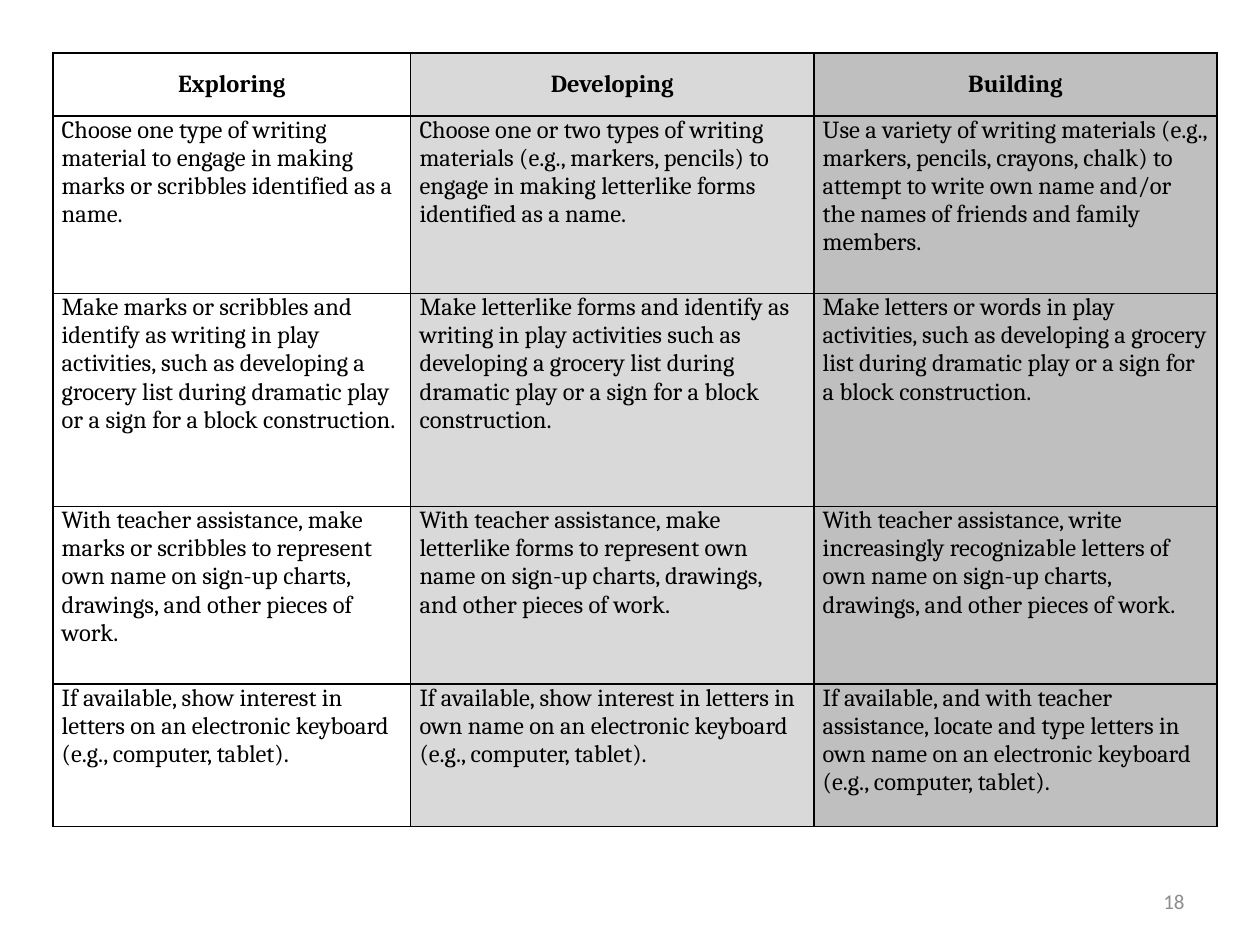
"""Build a slide with a table of three stages of early writing."""
from dataclasses import dataclass

from lxml import etree
from pptx import Presentation
from pptx import util as u
from pptx.dml.color import RGBColor
from pptx.enum import text
from pptx.oxml import ns


@dataclass(frozen=True)
class Theme:
    ink: str = "000000"
    mute: str = "8C8C8C"
    fills: tuple = (None, "D9D9D9", "BFBFBF")
    serif: str = "Cambria"
    sans: str = "Calibri"
    body: int = 14
    small: int = 12
    rule: int = 1


LOOK = Theme()
COLS = (2.84, 3.2, 3.2)
ROWS = (0.5, 1.41, 1.69, 1.41, 1.13)
CELLS = (
    ("Exploring", "Developing", "Building"),
    (
        "Choose one type of writing material to engage in making marks or scribbles identified as a name.",
        "Choose one or two types of writing materials (e.g., markers, pencils) to engage in making letterlike forms identified as a name.",
        "Use a variety of writing materials (e.g., markers, pencils, crayons, chalk) to attempt to write own name and/or the names of friends and family members.",
    ),
    (
        "Make marks or scribbles and identify as writing in play activities, such as developing a grocery list during dramatic play or a sign for a block construction.",
        "Make letterlike forms and identify as writing in play activities such as developing a grocery list during dramatic play or a sign for a block construction.",
        "Make letters or words in play activities, such as developing a grocery list during dramatic play or a sign for a block construction.",
    ),
    (
        "With teacher assistance, make marks or scribbles to represent own name on sign-up charts, drawings, and other pieces of work.",
        "With teacher assistance, make letterlike forms to represent own name on sign-up charts, drawings, and other pieces of work.",
        "With teacher assistance, write increasingly recognizable letters of own name on sign-up charts, drawings, and other pieces of work.",
    ),
    (
        "If available, show interest in letters on an electronic keyboard (e.g., computer, tablet).",
        "If available, show interest in letters in own name on an electronic keyboard (e.g., computer, tablet).",
        "If available, and with teacher assistance, locate and type letters in own name on an electronic keyboard (e.g., computer, tablet).",
    ),
)


def apply(item, values):
    for name, value in values.items():
        setattr(item, name, value)


def write(frame, words, align, color, **font):
    para = frame.paragraphs[0]
    para.alignment = align
    run = para.add_run()
    run.text = words
    apply(run.font, font)
    run.font.color.rgb = RGBColor.from_string(color)


def border(cell):
    props = cell._tc.get_or_add_tcPr()
    for i, side in enumerate(("lnL", "lnR", "lnT", "lnB")):
        line = etree.Element(ns.qn(f"a:{side}"), w=str(u.Pt(LOOK.rule)))
        fill = etree.SubElement(line, ns.qn("a:solidFill"))
        etree.SubElement(fill, ns.qn("a:srgbClr"), val=LOOK.ink)
        props.insert(i, line)


def fill_cell(cell, words, shade, head):
    pad = u.Inches(0.07)
    apply(cell, dict(
        margin_left=pad, margin_right=pad, margin_top=0, margin_bottom=0,
        vertical_anchor=text.MSO_ANCHOR.MIDDLE if head else text.MSO_ANCHOR.TOP,
    ))
    if shade:
        cell.fill.solid()
        cell.fill.fore_color.rgb = RGBColor.from_string(shade)
    else:
        cell.fill.background()
    border(cell)
    align = text.PP_ALIGN.CENTER if head else text.PP_ALIGN.LEFT
    write(cell.text_frame, words, align, LOOK.ink,
          name=LOOK.serif, size=u.Pt(LOOK.body), bold=head)


def add_grid(slide, left, top):
    size = [u.Inches(sum(spans)) for spans in (COLS, ROWS)]
    grid = slide.shapes.add_table(
        len(ROWS), len(COLS), u.Inches(left), u.Inches(top), *size).table
    apply(grid, dict(first_row=False, horz_banding=False))
    for col, wide in zip(grid.columns, COLS):
        col.width = u.Inches(wide)
    for i, (row, high) in enumerate(zip(grid.rows, ROWS)):
        row.height = u.Inches(high)
        for cell, words, shade in zip(row.cells, CELLS[i], LOOK.fills):
            fill_cell(cell, words, shade, i == 0)


def add_number(slide, words, *place):
    frame = slide.shapes.add_textbox(*map(u.Inches, place)).text_frame
    apply(frame, dict(word_wrap=True, vertical_anchor=text.MSO_ANCHOR.MIDDLE))
    write(frame, words, text.PP_ALIGN.RIGHT, LOOK.mute,
          name=LOOK.sans, size=u.Pt(LOOK.small))


def main():
    deck = Presentation()
    apply(deck, dict(slide_width=u.Inches(10), slide_height=u.Inches(7.5)))
    slide = deck.slides.add_slide(deck.slide_layouts[6])
    add_grid(slide, 0.42, 0.42)
    add_number(slide, "18", 7.17, 6.95, 2.33, 0.4)
    deck.save("out.pptx")


if __name__ == "__main__":
    main()
